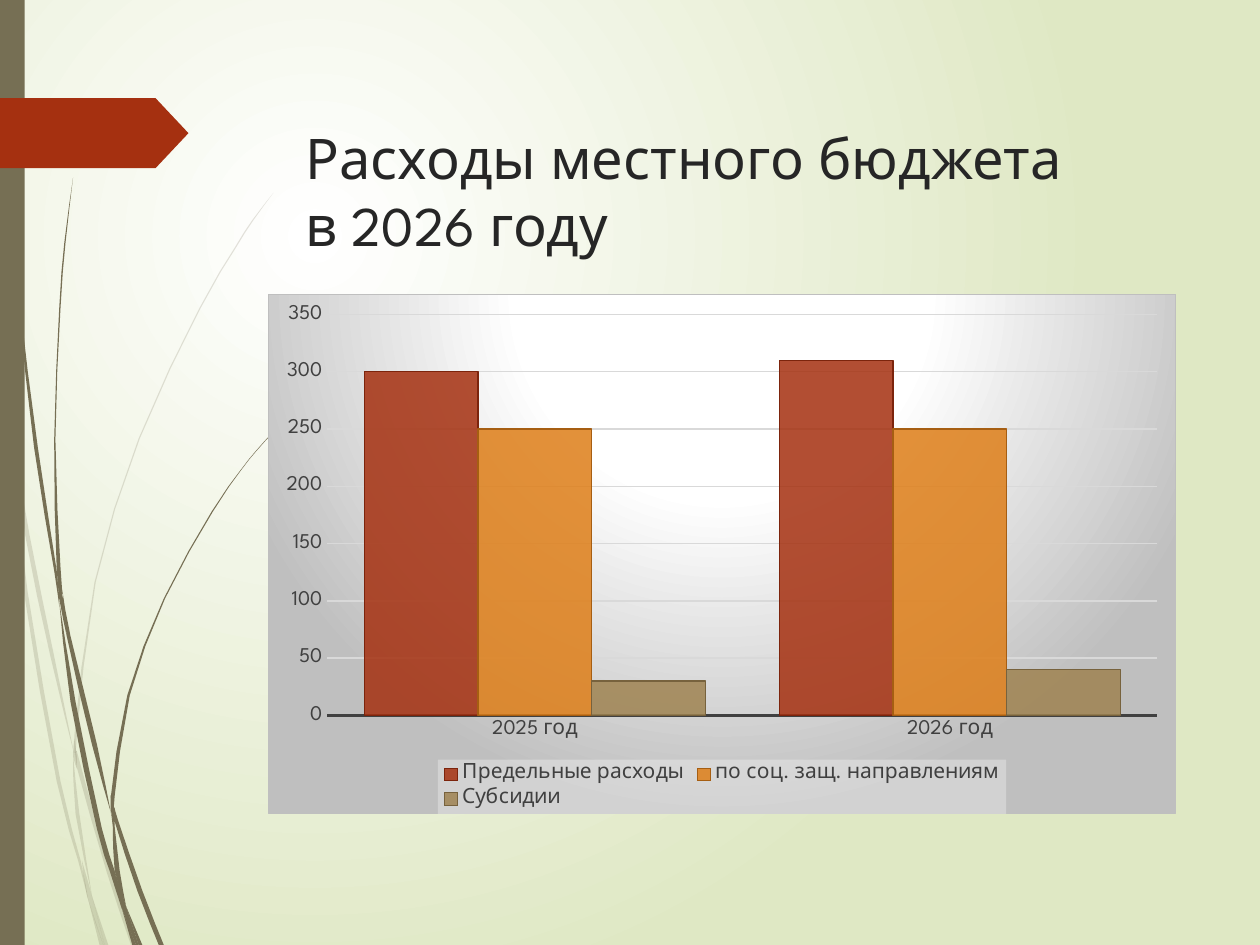
from collections import namedtuple

from lxml.etree import SubElement
from pptx import Presentation
from pptx.chart.data import CategoryChartData
from pptx.dml.color import RGBColor
from pptx.enum.chart import XL_CHART_TYPE as ChartType
from pptx.enum.chart import XL_LEGEND_POSITION as LegendPosition
from pptx.enum.chart import XL_TICK_MARK as TickMark
from pptx.enum.shapes import MSO_SHAPE as Preset
from pptx.enum.text import MSO_ANCHOR as Anchor
from pptx.enum.text import MSO_AUTO_SIZE as AutoSize
from pptx.enum.text import PP_ALIGN as Align
from pptx.oxml import parse_xml
from pptx.oxml.ns import nsdecls, qn
from pptx.util import Cm, Pt

Box = namedtuple("Box", "left top width height")

FONT = "League Spartan"
WHITE = RGBColor(0xFF, 0xFF, 0xFF)
PALE_GREEN = RGBColor(0xDF, 0xE8, 0xC4)
OLIVE = RGBColor(0x76, 0x6F, 0x54)
RUST = RGBColor(0xA5, 0x30, 0x10)
TITLE_INK = RGBColor(0x26, 0x26, 0x26)
CHART_INK = RGBColor(0x40, 0x40, 0x40)
GRID_GRAY = RGBColor(0xD9, 0xD9, 0xD9)
EDGE_GRAY = RGBColor(0xBF, 0xBF, 0xBF)

CATEGORIES = ["2025 год", "2026 год"]
SERIES = [  # name, values, fill, outline
    ("Предельные расходы", (300, 310), RUST, RGBColor(0x7C, 0x24, 0x0C)),
    ("по соц. защ. направлениям", (250, 250),
     RGBColor(0xDE, 0x7E, 0x18), RGBColor(0xA6, 0x5E, 0x12)),
    ("Субсидии", (30, 40), RGBColor(0x9F, 0x83, 0x51), RGBColor(0x77, 0x62, 0x3D)),
]

# Sections of grass: (left edge, right edge, y) in 1/750 of the box height
PALE_GRASS = [
    [(0, 0, 282), (3.5, 6, 322), (8, 8, 350)],
    [(10, 10, 345), (20, 23.5, 425), (40, 43, 521), (59, 59, 599)],
    [(61, 61, 596), (61, 64.5, 609), (85, 88, 693), (104, 108, 750)],
    [(73, 73, 711), (83, 86, 750)],
    [(8, 8, 350), (19, 22, 470), (45, 48, 620), (62, 64, 683), (70, 70, 714)],
    [(58, 58, 599), (60, 63, 646), (73, 73, 711)],
    [(217, 217, 153), (200, 201, 175), (186, 187, 197), (158, 159, 245),
     (110, 111, 348), (75, 76, 462), (59, 61, 584), (61, 61, 596)],
    [(70, 70, 714), (79, 82, 750)],
    [(59, 59, 586), (58, 61, 600), (61, 61, 610)],
    [(65, 65, 683), (69, 73, 711), (82, 83, 750)],
]
DARK_GRASS = [
    [(2, 3, 0), (5, 6, 110), (14, 15, 233), (27, 30, 355), (43, 45, 453),
     (47, 47, 481)],
    [(50, 50, 472), (53, 56, 505), (73, 77, 591), (88, 88, 645)],
    [(91, 91, 641), (91, 94, 652), (109, 113, 707), (126, 130, 750)],
    [(47, 47, 477), (56, 60, 557), (77, 81, 658), (87, 91, 691), (97, 97, 722)],
    [(58, 58, 141), (51, 52, 193), (47, 48, 245), (43, 44, 349), (45, 48, 450),
     (50, 50, 472)],
    [(100, 100, 719), (110, 113, 750)],
    [(45, 45, 449), (47, 50, 475), (53, 53, 505)],
    [(215.5, 216, 344), (203, 203.5, 358), (191, 191.5, 373), (168, 169, 406),
     (130, 131, 475), (101, 103, 552), (88, 91, 632), (91, 91, 641)],
    [(97, 97, 722), (105, 108, 750)],
    [(88, 88, 645), (89.5, 91, 656), (91, 95, 691), (100, 100, 719)],
    [(88, 88, 631), (88, 91, 643), (91, 91, 656)],
    [(91, 91, 691), (96, 100, 719), (108, 110, 750)],
]


def radial_gradient(stops, focus):
    """Circular gradient; focus holds the left, top, right, bottom percentages."""
    marks = "".join(f'<a:gs pos="{pos * 1000}"><a:srgbClr val="{color}"/></a:gs>'
                    for pos, color in stops)
    sides = " ".join(f'{side}="{value * 1000}"' for side, value in zip("ltrb", focus))
    return (f'<a:gradFill {nsdecls("a")} rotWithShape="1"><a:gsLst>{marks}</a:gsLst>'
            f'<a:path path="circle"><a:fillToRect {sides}/></a:path></a:gradFill>')


def paint(shape, color, opacity=100):
    shape.shadow.inherit = False
    shape.line.fill.background()
    set_fill(shape.fill, shape._element, color, opacity)


def set_fill(fill, element, color, opacity):
    fill.solid()
    fill.fore_color.rgb = color
    if opacity < 100:
        tint = element.find(f".//{qn('a:solidFill')}/{qn('a:srgbClr')}")
        SubElement(tint, qn("a:alpha")).set("val", str(opacity * 1000))


def smooth_curve(knots, steps=2):
    """Catmull-Rom curve through the knots."""
    ends = [knots[0], *knots, knots[-1]]
    curve = []
    for a, b, c, d in zip(ends, ends[1:], ends[2:], ends[3:]):
        for step in range(steps):
            t = step / steps
            curve.append(tuple(
                q + t * (r - p) / 2 + t**2 * (2 * p - 5 * q + 4 * r - s) / 2
                + t**3 * (3 * q - p - 3 * r + s) / 2
                for p, q, r, s in zip(a, b, c, d)))
    return curve + [knots[-1]]


def add_grass(page, box, knots, opacity):
    unit = box.height / 750
    curve = smooth_curve(knots)
    outline = [(left, y) for left, _, y in curve]
    outline += [(right, y) for _, right, y in reversed(curve)]
    points = [(round(box.left + x * unit), round(box.top + y * unit))
              for x, y in outline]
    builder = page.shapes.build_freeform(*points[0])
    builder.add_line_segments(points[1:], close=True)
    paint(builder.convert_to_shape(), OLIVE, opacity)


def add_backdrop(page, box):
    page.background.fill.solid()
    background = page._element.find(f".//{qn('p:bgPr')}")
    gradient = radial_gradient([(0, WHITE), (100, PALE_GREEN)], (50, 50, 100, 100))
    background.replace(background[0], parse_xml(gradient))

    for sections, opacity in ((PALE_GRASS, 20), (DARK_GRASS, 100)):
        for knots in sections:
            add_grass(page, box, knots, opacity)
    band = page.shapes.add_shape(Preset.RECTANGLE, box.left, box.top, Cm(0.5), box.height)
    paint(band, OLIVE)
    tab = page.shapes.add_shape(Preset.PENTAGON, box.left, box.top + Cm(1.98),
                                Cm(3.8), Cm(1.41))
    tab.adjustments[0] = 0.47
    paint(tab, RUST)


def add_title(page, box, text):
    title = page.shapes.title
    title.left, title.top, title.width, title.height = box
    frame = title.text_frame
    frame.text = text
    frame.word_wrap = True
    frame.auto_size = AutoSize.NONE
    frame.vertical_anchor = Anchor.TOP
    para = frame.paragraphs[0]
    para.alignment = Align.LEFT
    set_font(para.font, 32, TITLE_INK)


def set_font(font, size, color):
    font.name = FONT
    font.size = Pt(size)
    font.color.rgb = color


def style_axes(chart):
    for axis in (chart.category_axis, chart.value_axis):
        axis.major_tick_mark = axis.minor_tick_mark = TickMark.NONE
        set_font(axis.tick_labels.font, 12, CHART_INK)
    base = chart.category_axis.format.line
    base.color.rgb, base.width = CHART_INK, Pt(1.5)
    values = chart.value_axis
    values.minimum_scale, values.maximum_scale, values.major_unit = 0, 350, 50
    values.format.line.fill.background()
    grid = values.major_gridlines.format.line
    grid.color.rgb, grid.width = GRID_GRAY, Pt(0.75)


def add_frame(text_properties, fill, line):
    """Put fill and line before the text properties of a chart part."""
    text_properties.addprevious(parse_xml(
        f'<c:spPr {nsdecls("c", "a")}>{fill}{line}</c:spPr>'))


def add_budget_chart(page, box):
    data = CategoryChartData()
    data.categories = CATEGORIES
    for name, values, _, _ in SERIES:
        data.add_series(name, values)
    chart = page.shapes.add_chart(ChartType.COLUMN_CLUSTERED, *box, data).chart
    chart.has_title = False
    set_font(chart.font, 10, CHART_INK)
    style_axes(chart)

    plot = chart.plots[0]
    plot.gap_width, plot.overlap, plot.vary_by_categories = 65, 0, False
    for series, (_, _, color, edge) in zip(plot.series, SERIES):
        set_fill(series.format.fill, series._element, color, 85)
        series.format.line.color.rgb = edge
        series.format.line.width = Pt(0.75)

    chart.has_legend = True
    legend = chart.legend
    legend.position = LegendPosition.BOTTOM
    legend.include_in_layout = False
    set_font(legend.font, 12, CHART_INK)
    add_frame(legend._element.find(qn("c:txPr")),
              '<a:solidFill><a:srgbClr val="F2F2F2"><a:alpha val="39000"/></a:srgbClr>'
              '</a:solidFill>', '<a:ln><a:noFill/></a:ln>')
    gradient = radial_gradient([(0, WHITE), (39, WHITE), (100, EDGE_GRAY)],
                               (50, -80, 50, 180))
    add_frame(chart._chartSpace.find(qn("c:txPr")), gradient,
              f'<a:ln w="{Pt(0.75)}"><a:solidFill><a:srgbClr val="{EDGE_GRAY}"/>'
              '</a:solidFill></a:ln>')


def main():
    deck = Presentation()
    deck.slide_width, deck.slide_height = Cm(25.4), Cm(19.05)
    page = deck.slides.add_slide(deck.slide_layouts[5])
    add_backdrop(page, Box(0, 0, deck.slide_width, deck.slide_height))
    add_title(page, Box(Cm(5.9), Cm(2.36), Cm(18.31), Cm(3.56)),
              "Расходы местного бюджета\vв 2026 году")
    add_budget_chart(page, Box(Cm(5.4), Cm(5.92), Cm(18.31), Cm(10.5)))
    deck.save("out.pptx")


if __name__ == "__main__":
    main()
